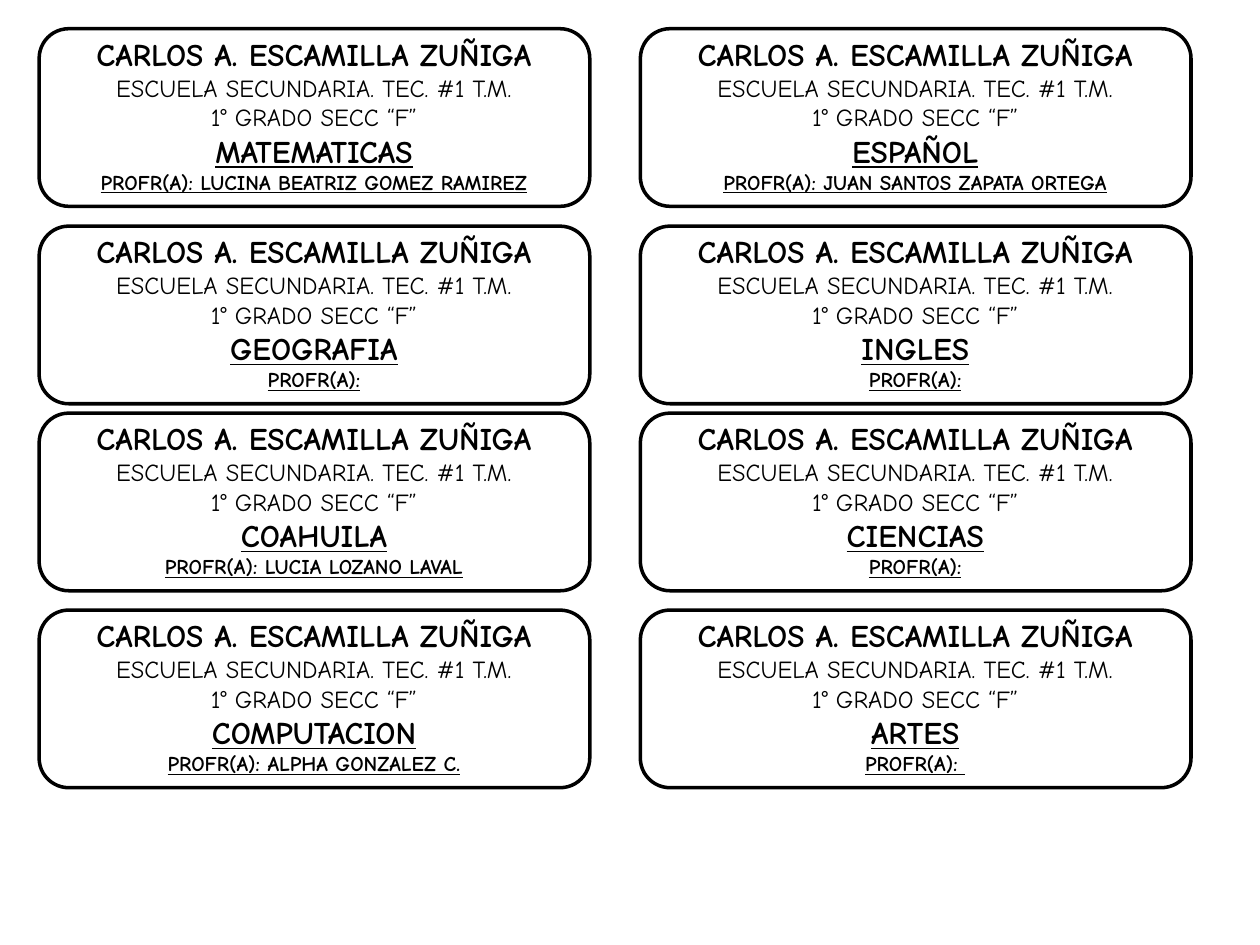
"""Build a sheet of eight notebook labels, one per school subject."""
import pptx
import pptx.dml.color
import pptx.enum.shapes
import pptx.enum.text
import pptx.util

Cm = pptx.util.Cm
BLACK = pptx.dml.color.RGBColor(0, 0, 0)
FONT = "Comic Neue"
STUDENT = "CARLOS A. ESCAMILLA ZUÑIGA"
SCHOOL = "ESCUELA SECUNDARIA. TEC. #1 T.M."
GROUP = "1° GRADO SECC “F”"
LABELS = [
    ("MATEMATICAS", "PROFR(A): LUCINA BEATRIZ GOMEZ RAMIREZ"),
    ("ESPAÑOL", "PROFR(A): JUAN SANTOS ZAPATA ORTEGA"),
    ("GEOGRAFIA", "PROFR(A):"),
    ("INGLES", "PROFR(A):"),
    ("COAHUILA", "PROFR(A): LUCIA LOZANO LAVAL"),
    ("CIENCIAS", "PROFR(A):"),
    ("COMPUTACION", "PROFR(A): ALPHA GONZALEZ C."),
    ("ARTES", "PROFR(A): "),
]
LEFTS = [0.58, 12.7]
TOPS = [0.58, 4.56, 8.33, 12.3]


def write_line(p, text, size=14, bold=False, underline=None):
    p.alignment = pptx.enum.text.PP_ALIGN.CENTER
    r = p.add_run()
    r.text = text
    r.font.name = FONT
    r.font.size = pptx.util.Pt(size)
    r.font.bold = bold
    r.font.underline = underline
    r.font.color.rgb = BLACK


prs = pptx.Presentation()
prs.slide_width = Cm(25.4)
prs.slide_height = Cm(19.05)
s = prs.slides.add_slide(prs.slide_layouts[6])

for i, (subject, teacher) in enumerate(LABELS):
    left, top = LEFTS[i % 2], TOPS[i // 2]
    label = s.shapes.add_group_shape()

    sp = label.shapes.add_shape(
        pptx.enum.shapes.MSO_SHAPE.ROUNDED_RECTANGLE,
        Cm(left + 0.21), Cm(top), Cm(11.1), Cm(3.58))
    sp.shadow.inherit = False
    sp.fill.background()
    sp.line.color.rgb = BLACK
    sp.line.width = pptx.util.Pt(2)

    tf = label.shapes.add_textbox(Cm(left), Cm(top), Cm(11.5), Cm(3.5)).text_frame
    tf.word_wrap = True
    tf.auto_size = pptx.enum.text.MSO_AUTO_SIZE.SHAPE_TO_FIT_TEXT
    write_line(tf.paragraphs[0], STUDENT, size=18, bold=True)
    write_line(tf.add_paragraph(), SCHOOL)
    write_line(tf.add_paragraph(), GROUP)
    write_line(tf.add_paragraph(), subject, size=18, bold=True, underline=True)
    write_line(tf.add_paragraph(), teacher, size=12, bold=True, underline=True)

prs.save("out.pptx")
